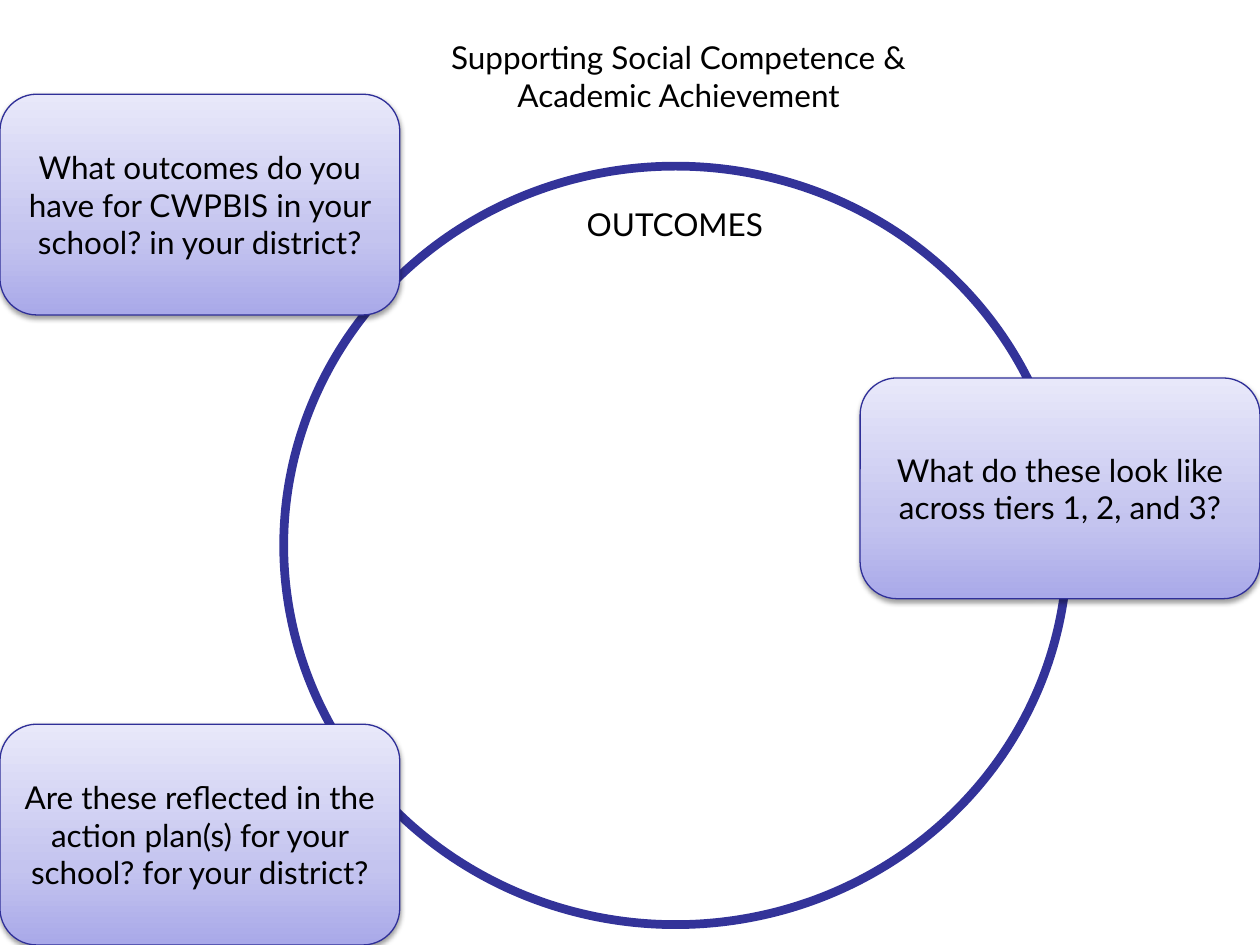
import copy
import pptx
import pptx.util
import pptx.dml.color
import pptx.enum.shapes
import pptx.enum.text
import pptx.oxml
import pptx.oxml.ns

Cm, Pt = pptx.util.Cm, pptx.util.Pt
Kind = pptx.enum.shapes.MSO_SHAPE
Anchor = pptx.enum.text.MSO_ANCHOR
qn = pptx.oxml.ns.qn
NS = pptx.oxml.ns.nsdecls("a")


def color(code):
    return pptx.dml.color.RGBColor.from_string(code)


def write(shape, text, size=18, font="Lato", ink="000000", anchor=Anchor.TOP, wrap=True):
    frame = shape.text_frame
    frame.text = text
    frame.word_wrap = wrap
    frame.auto_size = pptx.enum.text.MSO_AUTO_SIZE.NONE
    frame.vertical_anchor = anchor
    for para in frame.paragraphs:
        para.alignment = pptx.enum.text.PP_ALIGN.CENTER
        para.font.size = Pt(size)
        para.font.name = font
        para.font.color.rgb = color(ink)


deck = pptx.Presentation()
deck.slide_width, deck.slide_height = Cm(25.4), Cm(19.05)
slide = deck.slides.add_slide(deck.slide_layouts[5])
shapes = slide.shapes

# Ring with a half transparent white fill
ring = shapes.add_shape(Kind.OVAL, Cm(5.72), Cm(3.35), Cm(15.8), Cm(15.29))
ring.shadow.inherit = False
ring.fill.solid()
ring.fill.fore_color.rgb = color("FFFFFF")
tone = ring._element.spPr.find(qn("a:solidFill"))[0]
tone.append(pptx.oxml.parse_xml(f'<a:alpha {NS} val="50000"/>'))
ring.line.color.rgb = color("333399")
ring.line.width = Pt(5)

# Ring label
label = shapes.add_textbox(Cm(10.8), Cm(4.01), Cm(5.61), Cm(1.02))
write(label, "OUTCOMES")

# Title
title = shapes.title
title.left, title.top, title.width, title.height = Cm(7.24), Cm(0.64), Cm(12.88), Cm(2.31)
write(title, "Supporting Social Competence &\nAcademic Achievement", wrap=False)

# Question cards around the ring
wide, high = Cm(8.06), Cm(4.45)
right = deck.slide_width - wide
cards = [
    (0, Cm(1.9), "What outcomes do you have for CWPBIS in your school? in your district?"),
    (0, deck.slide_height - high,
     "Are these reflected in the action plan(s) for your school? for your district?"),
    (right, Cm(7.62), "What do these look like across tiers 1, 2, and 3?"),
]
stops = [(0, "A9A9E9"), (0.35, "C4C4EF"), (1, "E8E8FA")]

for left, top, text in cards:
    card = shapes.add_shape(Kind.ROUNDED_RECTANGLE, left, top, wide, high)
    card.line.color.rgb = color("2F2F98")
    card.line.width = Pt(0.75)

    # Three-stop gradient, dark at the bottom
    card.fill.gradient()
    card.fill.gradient_angle = 90
    first = card._element.spPr.find(qn("a:gradFill")).find(qn("a:gsLst"))[0]
    first.addnext(copy.deepcopy(first))
    for stop, (place, code) in zip(card.fill.gradient_stops, stops):
        stop.position = place
        stop.color.rgb = color(code)

    # Soft shadow straight below
    card.shadow.inherit = False
    card._element.spPr.find(qn("a:effectLst")).append(pptx.oxml.parse_xml(
        f'<a:outerShdw {NS} blurRad="{Pt(3.1)}" dist="{Pt(1.6)}" dir="5400000" rotWithShape="0">'
        '<a:srgbClr val="000000"><a:alpha val="38000"/></a:srgbClr></a:outerShdw>'))
    write(card, text, anchor=Anchor.MIDDLE)

deck.save("out.pptx")
